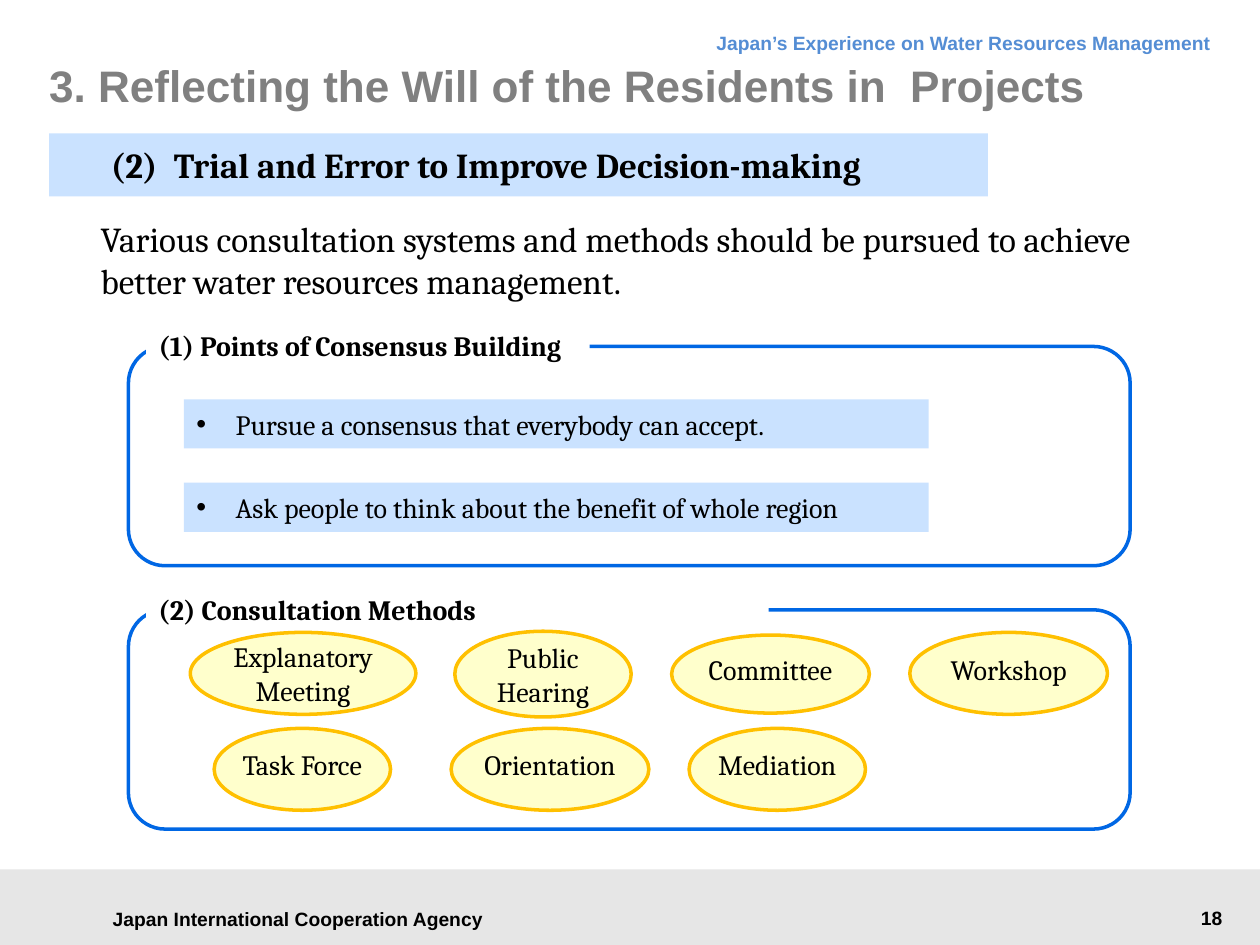
from lxml import etree
from pptx import Presentation
from pptx.dml.color import RGBColor
from pptx.enum import shapes, text
from pptx.oxml import ns
from pptx.util import Pt

BLACK = RGBColor(0x00, 0x00, 0x00)
WHITE = RGBColor(0xFF, 0xFF, 0xFF)
TITLE_GREY = RGBColor(0x80, 0x80, 0x80)
BAND_GREY = RGBColor(0xE6, 0xE6, 0xE6)
HEADER_BLUE = RGBColor(0x54, 0x8D, 0xD4)
FRAME_BLUE = RGBColor(0x00, 0x67, 0xE4)
PALE_BLUE = RGBColor(0xCA, 0xE2, 0xFF)
PALE_YELLOW = RGBColor(0xFF, 0xFF, 0xCC)
AMBER = RGBColor(0xFF, 0xC0, 0x00)

KIND = shapes.MSO_SHAPE
ALIGN = text.PP_ALIGN
ANCHOR = text.MSO_ANCHOR
DEFAULT_INSETS = (7.2, 3.6, 7.2, 3.6)
NO_INSETS = (0, 0, 0, 0)

# wording, centre x, centre y, width, height
METHODS = [
    ("Explanatory Meeting", 173.2, 384.8, 128.9, 46.8),
    ("Public Hearing", 310.3, 385.2, 100.8, 49),
    ("Committee", 440.3, 385.2, 113, 44.6),
    ("Workshop", 576.4, 384.8, 113, 46.8),
    ("Task Force", 172.8, 439.6, 100.8, 46.8),
    ("Orientation", 314.3, 439.6, 113, 46.8),
    ("Mediation", 444.2, 439.6, 100.8, 46.8),
]


def add_block(page, kind, area, fill, line=None):
    block = page.shapes.add_shape(kind, *map(Pt, area))
    block.shadow.inherit = False
    block.fill.solid()
    block.fill.fore_color.rgb = fill
    if line is None:
        block.line.fill.background()
    else:
        block.line.color.rgb = line
        block.line.width = Pt(2)
    return block


def write(box, wording, size, font="Cambria", color=BLACK, bold=False,
          align=ALIGN.LEFT, anchor=ANCHOR.TOP, insets=DEFAULT_INSETS):
    """Fill a shape with one formatted paragraph and return the paragraph."""
    frame = box.text_frame
    frame.word_wrap = True
    frame.vertical_anchor = anchor
    (frame.margin_left, frame.margin_top,
     frame.margin_right, frame.margin_bottom) = map(Pt, insets)
    frame.text = wording
    para = frame.paragraphs[0]
    para.alignment = align
    for span in para.runs:
        span.font.name = font
        span.font.size = Pt(size)
        span.font.bold = bold
        span.font.color.rgb = color
    return para


def add_label(page, area, wording, size, **style):
    box = page.shapes.add_textbox(*map(Pt, area))
    return write(box, wording, size, **style)


def add_section(page, top, heading, heading_width):
    """Rounded frame whose top edge is interrupted by a heading."""
    add_block(page, KIND.ROUNDED_RECTANGLE, (73.4, top, 572.4, 125.3), WHITE, FRAME_BLUE)
    plate = add_block(page, KIND.RECTANGLE, (83.5, top - 13.7, heading_width, 26.6), WHITE)
    write(plate, heading, 16, bold=True)


def add_point(page, top, wording):
    bar = add_block(page, KIND.RECTANGLE, (105.1, top, 425.5, 28.1), PALE_BLUE)
    para = write(bar, wording, 16, anchor=ANCHOR.MIDDLE)
    properties = para._p.get_or_add_pPr()
    properties.set("marL", str(Pt(22.5)))
    properties.set("indent", str(Pt(-22.5)))
    etree.SubElement(properties, ns.qn("a:buFont")).set("typeface", "Arial")
    etree.SubElement(properties, ns.qn("a:buChar")).set("char", "•")


def add_method(page, wording, center_x, center_y, width, height):
    area = (center_x - width / 2, center_y - height / 2, width, height)
    oval = add_block(page, KIND.OVAL, area, PALE_YELLOW, AMBER)
    para = write(oval, wording, 16, align=ALIGN.CENTER,
                 anchor=ANCHOR.MIDDLE, insets=NO_INSETS)
    if " Meeting" not in wording and " Hearing" not in wording:
        para.line_spacing = Pt(14)


def add_header_and_footer(page):
    add_block(page, KIND.RECTANGLE, (0, 496.8, 720, 43.2), BAND_GREY)
    small = dict(size=11, font="Arial", bold=True)
    add_label(page, (51.1, 512.6, 238.3, 24.5), "Japan International Cooperation Agency",
              align=ALIGN.CENTER, anchor=ANCHOR.MIDDLE, **small)
    add_label(page, (592.6, 514.1, 113, 20.9), "18", align=ALIGN.RIGHT, **small)
    header = add_label(page, (195.8, 9.4, 503.3, 27.4),
                       "Japan’s Experience on Water Resources Management",
                       color=HEADER_BLUE, align=ALIGN.RIGHT, **small)
    header.line_spacing = Pt(18)


def add_introduction(page):
    add_label(page, (28.1, 20.2, 648, 56.9),
              "3. Reflecting the Will of the Residents in  Projects", 25.2,
              font="Arial", color=TITLE_GREY, bold=True,
              anchor=ANCHOR.MIDDLE, insets=NO_INSETS)
    banner = add_block(page, KIND.RECTANGLE, (28.1, 76.3, 536.4, 36), PALE_BLUE)
    para = write(banner, "(2)\tTrial and Error to Improve Decision-making", 20,
                 bold=True, insets=(31, 5.8, 25.2, 5.8))
    para._p.get_or_add_pPr().set("marL", str(Pt(4.3)))
    add_label(page, (50.4, 121, 621.4, 55.4),
              "Various consultation systems and methods should be pursued "
              "to achieve better water resources management.", 20)


def main():
    deck = Presentation()
    deck.slide_width, deck.slide_height = Pt(720), Pt(540)
    page = deck.slides.add_slide(deck.slide_layouts[6])
    add_header_and_footer(page)
    add_introduction(page)
    add_section(page, 198, "(1) Points of Consensus Building", 253.4)
    add_point(page, 228.2, "Pursue a consensus that everybody can accept.")
    add_point(page, 275.8, "Ask people to think about the benefit of whole region")
    add_section(page, 348.5, "(2) Consultation Methods", 355.7)
    for method in METHODS:
        add_method(page, *method)
    deck.save("out.pptx")


if __name__ == "__main__":
    main()
